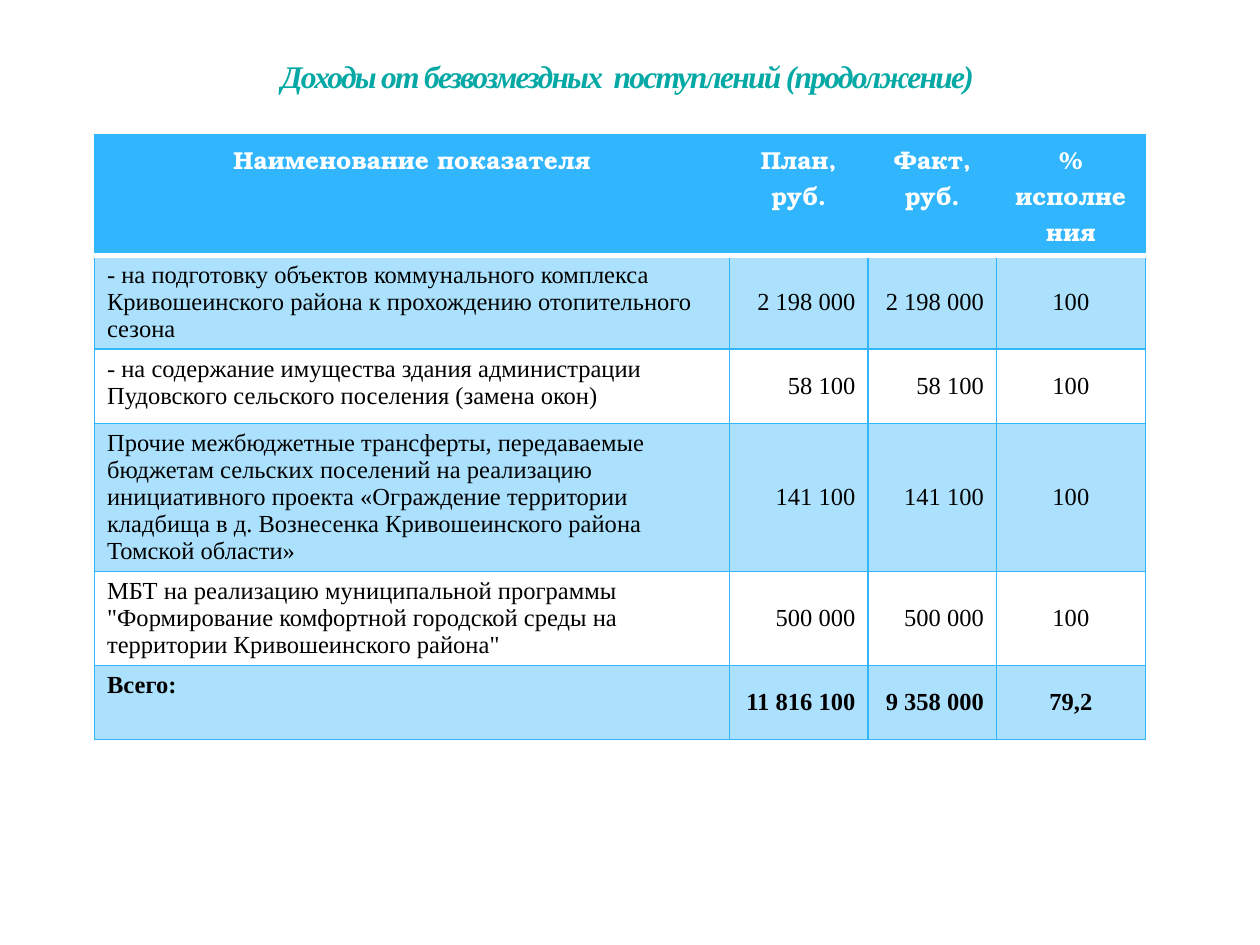
import dataclasses

import pptx
import pptx.dml.color
import pptx.enum.text
import pptx.oxml
import pptx.oxml.ns
import pptx.util

ALIGN = pptx.enum.text.PP_ALIGN
ANCHOR = pptx.enum.text.MSO_ANCHOR


@dataclasses.dataclass(frozen=True)
class Theme:
    accent: str = "31B6FD"
    title: str = "04A8A4"
    ink: str = "000000"
    paper: str = "FFFFFF"
    band_alpha: int = 40
    serif: str = "Times New Roman"
    heading: str = "TeX Gyre Bonum"
    title_size: int = 18
    table_size: int = 14
    rule: int = 1
    header_rule: int = 3


class Deck:
    """Draws elements on a 100 by 75 grid in one theme."""

    def __init__(self, theme):
        self.theme = theme
        self.prs = pptx.Presentation()
        self.prs.slide_width = pptx.util.Inches(10)
        self.prs.slide_height = pptx.util.Inches(7.5)
        self.slide = self.prs.slides.add_slide(self.prs.slide_layouts[6])

    def grid(self, *units):
        return [round(self.prs.slide_width * u / 100) for u in units]

    def set_text(self, tf, text, size, font, color, align, bold=False, italic=False):
        tf.text = text
        p = tf.paragraphs[0]
        p.alignment = align
        for r in p.runs:
            r.font.size = pptx.util.Pt(size)
            r.font.name = font
            r.font.bold = bold
            r.font.italic = italic
            r.font.color.rgb = pptx.dml.color.RGBColor.from_string(color)

    def title(self, text, box):
        t = self.theme
        tf = self.slide.shapes.add_textbox(*self.grid(*box)).text_frame
        tf.word_wrap = True
        tf.vertical_anchor = ANCHOR.MIDDLE
        self.set_text(tf, text, t.title_size, t.serif, t.title, ALIGN.CENTER, True, True)
        for r in tf.paragraphs[0].runs:
            r.font._element.set("spc", "-100")

    def border(self, cell, side, color, width):
        cell._tc.get_or_add_tcPr().append(pptx.oxml.parse_xml(
            f'<a:{side} {pptx.oxml.ns.nsdecls("a")} w="{pptx.util.Pt(width)}">'
            f'<a:solidFill><a:srgbClr val="{color}"/></a:solidFill></a:{side}>'))

    def fill(self, cell, row):
        if row and row % 2 == 0:
            cell.fill.background()
            return
        cell.fill.solid()
        cell.fill.fore_color.rgb = pptx.dml.color.RGBColor.from_string(self.theme.accent)
        if row:
            solid = cell._tc.tcPr.find(pptx.oxml.ns.qn("a:solidFill"))
            solid[0].append(pptx.oxml.parse_xml(
                f'<a:alpha {pptx.oxml.ns.nsdecls("a")} val="{self.theme.band_alpha * 1000}"/>'))

    def cell(self, cell, text, row, col, last):
        t = self.theme
        header_edges = {(0, "lnB"), (1, "lnT")}
        for side in ("lnL", "lnR", "lnT", "lnB"):
            strong = (row, side) in header_edges
            self.border(cell, side, t.paper if strong else t.accent,
                        t.header_rule if strong else t.rule)
        self.fill(cell, row)
        if row == 0:
            self.set_text(cell.text_frame, text, t.table_size, t.heading, t.paper,
                          ALIGN.CENTER, True)
            return
        if col:
            cell.vertical_anchor = ANCHOR.MIDDLE
        align = (ALIGN.LEFT, ALIGN.RIGHT, ALIGN.RIGHT, ALIGN.CENTER)[col]
        self.set_text(cell.text_frame, text, t.table_size, t.serif, t.ink, align, row == last)

    def table(self, rows, left, top, widths, heights):
        box = self.grid(left, top, sum(widths), sum(heights))
        table = self.slide.shapes.add_table(len(rows), len(widths), *box).table
        for column, width in zip(table.columns, self.grid(*widths)):
            column.width = width
        for line, height in zip(table.rows, self.grid(*heights)):
            line.height = height
        for i, values in enumerate(rows):
            for j, text in enumerate(values):
                self.cell(table.cell(i, j), text, i, j, len(rows) - 1)


ROWS = [
    ("Наименование показателя", "План, руб.", "Факт, руб.", "% исполнения"),
    ("- на подготовку объектов коммунального комплекса Кривошеинского района "
     "к прохождению отопительного сезона", "2 198 000", "2 198 000", "100"),
    ("- на содержание имущества здания администрации Пудовского сельского "
     "поселения (замена окон)", "58 100", "58 100", "100"),
    ("Прочие межбюджетные трансферты, передаваемые бюджетам сельских поселений "
     "на реализацию инициативного проекта «Ограждение территории кладбища "
     "в д. Вознесенка Кривошеинского района Томской области»",
     "141 100", "141 100", "100"),
    ('МБТ на реализацию муниципальной программы "Формирование комфортной '
     'городской среды на территории Кривошеинского района"',
     "500 000", "500 000", "100"),
    ("Всего:", "11 816 100", "9 358 000", "79,2"),
]


def main():
    deck = Deck(Theme())
    deck.table(ROWS, 7.5, 10.7, (50.4, 11, 10.2, 11.8), [8.3] + [5.9] * 5)
    deck.title("Доходы от безвозмездных  поступлений (продолжение)", (11.4, 3.1, 76.8, 5.8))
    deck.prs.save("out.pptx")


if __name__ == "__main__":
    main()
